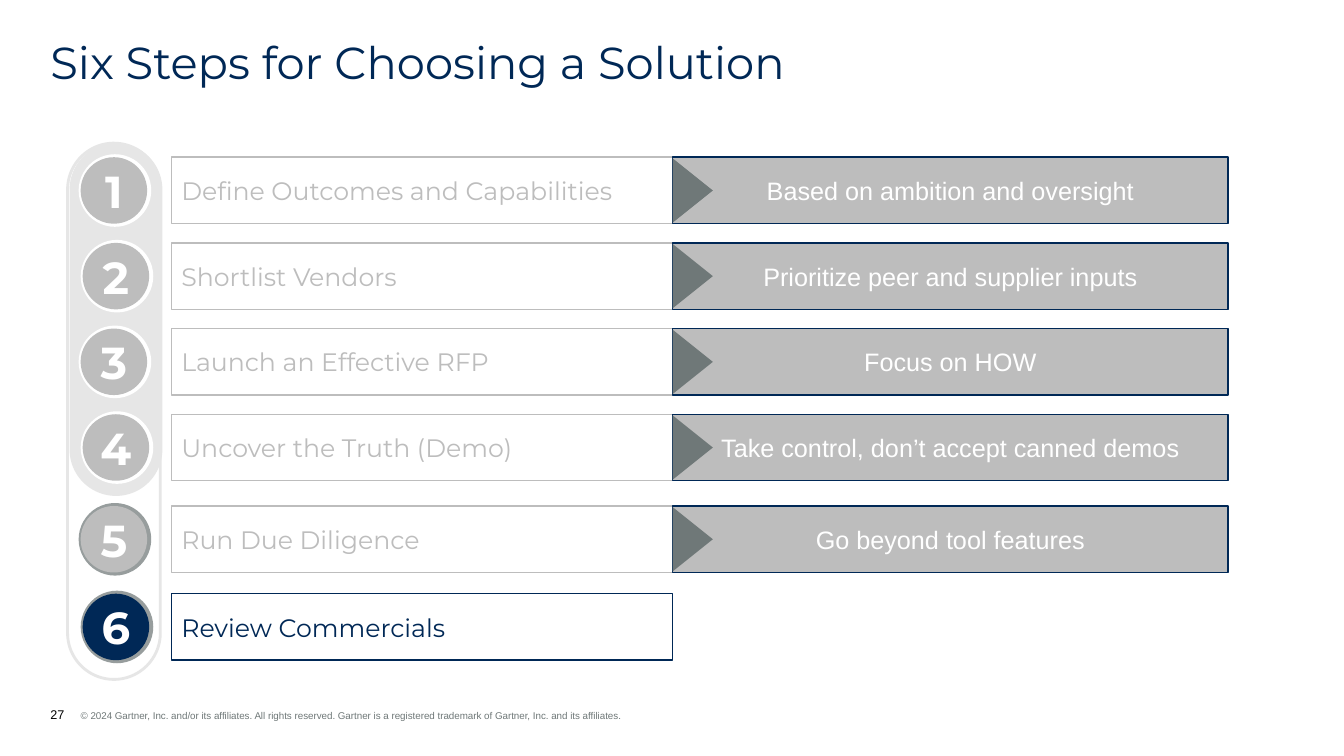
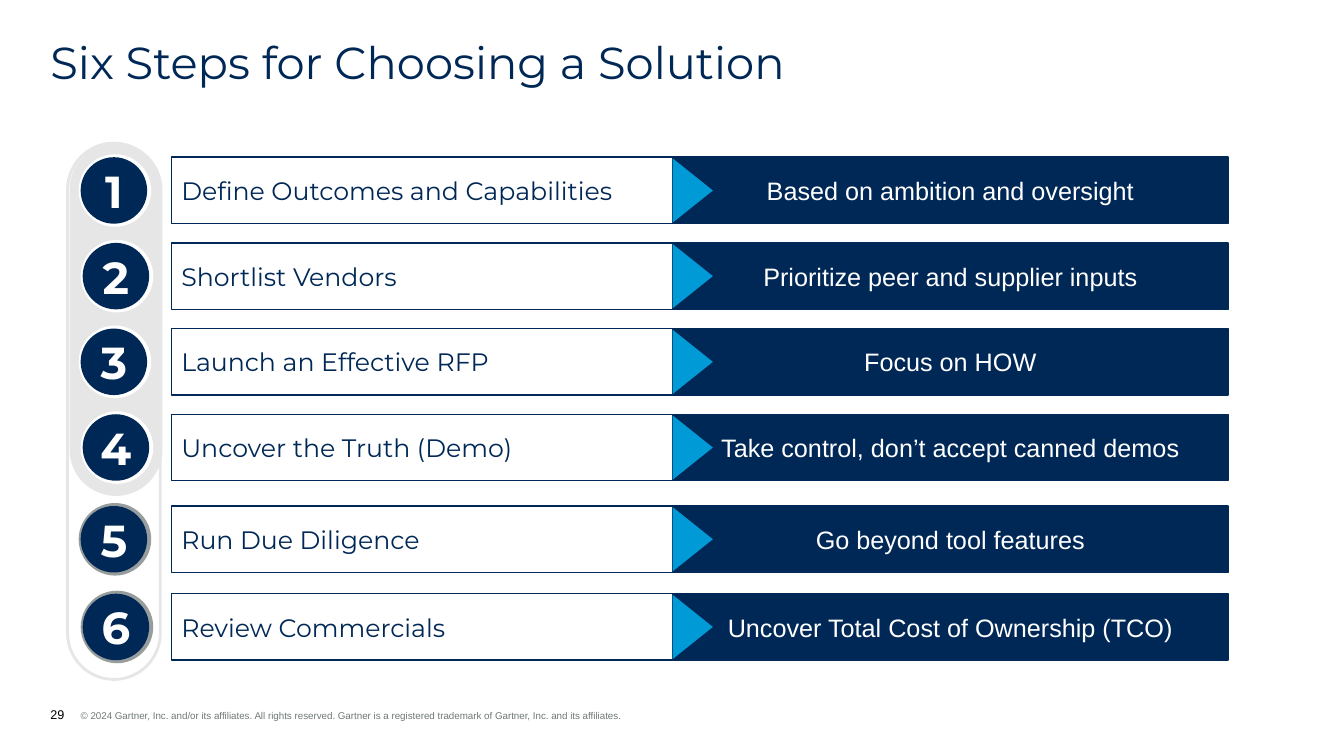
from dataclasses import dataclass
from typing import Optional

import lxml.etree
import pptx
import pptx.dml.color
import pptx.enum.shapes
import pptx.enum.text
import pptx.oxml.ns
import pptx.presentation
import pptx.shapes.autoshape
import pptx.slide
import pptx.text.text
import pptx.util

Shape = pptx.shapes.autoshape.Shape
Slide = pptx.slide.Slide
Kind = pptx.enum.shapes.MSO_SHAPE
Align = pptx.enum.text.PP_ALIGN
Anchor = pptx.enum.text.MSO_ANCHOR


@dataclass(frozen=True)
class Theme:
    navy: str = "002856"
    blue: str = "009AD7"
    silver: str = "BDBDBD"
    slate: str = "6F7878"
    ring: str = "979D9D"
    rail: str = "E6E6E6"
    white: str = "FFFFFF"
    black: str = "000000"
    heading_font: str = "Montserrat"
    body_font: str = "Arial"
    title_size: int = 32
    text_size: int = 18
    page_size: int = 9
    legal_size: int = 7


@dataclass(frozen=True)
class Grid:
    """Inches: columns of the step list and the rule for its rows."""
    width: float = 13.33
    height: float = 7.5
    margin: float = 0.5
    rail_left: float = 0.68
    rail_top: float = 1.42
    rail_width: float = 0.92
    label_left: float = 1.7
    answer_left: float = 6.67
    answer_width: float = 5.51
    row_height: float = 0.66
    ring_border: float = 0.03
    arrow_depth: float = 0.4
    arrow_span: float = 0.64

    def row_top(self, row: int) -> float:
        """Four rows beside the filled rail, then a second group of two."""
        return 1.56 + 0.85 * row if row < 4 else 5.02 + 0.87 * (row - 4)

    def badge_left(self, row: int) -> float:
        """Badges sway slightly, even steps sitting to the right."""
        return 0.8 + 0.02 * (row % 2)


@dataclass(frozen=True)
class Box:
    left: float
    top: float
    width: float
    height: float

    def lengths(self) -> tuple:
        return tuple(pptx.util.Inches(value) for value in
                     (self.left, self.top, self.width, self.height))


@dataclass(frozen=True)
class Step:
    label: str
    answer: str


@dataclass(frozen=True)
class Look:
    main: str
    arrow: str


@dataclass(frozen=True)
class StepsPage:
    number: str
    current: Optional[int] = None  # row whose answer is still to come


THEME = Theme()
GRID = Grid()
ACTIVE = Look(THEME.navy, THEME.blue)
MUTED = Look(THEME.silver, THEME.slate)
TITLE = "Six Steps for Choosing a Solution"
LEGAL = ("© 2024 Gartner, Inc. and/or its affiliates. All rights reserved. "
         "Gartner is a registered trademark of Gartner, Inc. and its affiliates.")
STEPS = (
    Step("Define Outcomes and Capabilities", "Based on ambition and oversight"),
    Step("Shortlist Vendors", "Prioritize peer and supplier inputs"),
    Step("Launch an Effective RFP", "Focus on HOW"),
    Step("Uncover the Truth (Demo)", "Take control, don’t accept canned demos"),
    Step("Run Due Diligence", "Go beyond tool features"),
    Step("Review Commercials", "Uncover Total Cost of Ownership (TCO)"),
)
PAGES = (StepsPage("27", current=5), StepsPage("29"))


def rgb(color: str) -> pptx.dml.color.RGBColor:
    return pptx.dml.color.RGBColor.from_string(color)


def add_run(paragraph, text: str, font: str, size: int, color: str,
            bold: bool = False) -> None:
    run = paragraph.add_run()
    run.text = text
    run.font.name = font
    run.font.size = pptx.util.Pt(size)
    run.font.bold = bold
    run.font.color.rgb = rgb(color)


def set_frame(frame: pptx.text.text.TextFrame, anchor, inset: bool = False) -> None:
    frame.word_wrap = True
    frame.auto_size = pptx.enum.text.MSO_AUTO_SIZE.NONE
    frame.vertical_anchor = anchor
    across, down = (0.1, 0.05) if inset else (0, 0)
    frame.margin_left = frame.margin_right = pptx.util.Inches(across)
    frame.margin_top = frame.margin_bottom = pptx.util.Inches(down)


def add_shape(slide: Slide, kind, box: Box, fill: Optional[str] = None,
              line: Optional[str] = None, weight: float = 1) -> Shape:
    shape = slide.shapes.add_shape(kind, *box.lengths())
    shape.shadow.inherit = False
    if fill:
        shape.fill.solid()
        shape.fill.fore_color.rgb = rgb(fill)
    else:
        shape.fill.background()
    if line:
        shape.line.color.rgb = rgb(line)
        shape.line.width = pptx.util.Pt(weight)
    else:
        shape.line.fill.background()
    return shape


def write_in(shape: Shape, text: str, font: str, size: int, color: str,
             align=Align.CENTER, inset: bool = True, bold: bool = False) -> None:
    set_frame(shape.text_frame, Anchor.MIDDLE, inset)
    paragraph = shape.text_frame.paragraphs[0]
    paragraph.alignment = align
    add_run(paragraph, text, font, size, color, bold)


def add_title(slide: Slide) -> None:
    title = slide.shapes.title
    box = Box(GRID.margin, 0.4, GRID.width - 2 * GRID.margin, 0.48)
    title.left, title.top, title.width, title.height = box.lengths()
    set_frame(title.text_frame, Anchor.TOP)
    paragraph = title.text_frame.paragraphs[0]
    paragraph.alignment = Align.LEFT
    paragraph.line_spacing = 0.9
    add_run(paragraph, TITLE, THEME.heading_font, THEME.title_size, THEME.navy)


def add_footer(slide: Slide, number: str) -> None:
    box = Box(GRID.margin, 7.01, 7.85, 0.15)
    frame = slide.shapes.add_textbox(*box.lengths()).text_frame
    set_frame(frame, Anchor.BOTTOM)
    paragraph = frame.paragraphs[0]
    # Hanging indent with one tab stop after the page number
    properties = paragraph._p.get_or_add_pPr()
    indent = pptx.util.Inches(0.3)
    properties.set("marL", str(indent))
    properties.set("indent", str(-indent))
    tabs = lxml.etree.SubElement(properties, pptx.oxml.ns.qn("a:tabLst"))
    lxml.etree.SubElement(tabs, pptx.oxml.ns.qn("a:tab"),
                          pos=str(pptx.util.Inches(0.32)), algn="l")
    add_run(paragraph, number, THEME.body_font, THEME.page_size, THEME.black)
    add_run(paragraph, "\t" + LEGAL, THEME.body_font, THEME.legal_size, THEME.slate)


def add_rails(slide: Slide) -> None:
    filled = Box(GRID.rail_left + 0.01, GRID.rail_top, GRID.rail_width, 3.5)
    outline = Box(GRID.rail_left - 0.01, GRID.rail_top, GRID.rail_width, 5.32)
    for rail in (add_shape(slide, Kind.ROUNDED_RECTANGLE, filled, fill=THEME.rail),
                 add_shape(slide, Kind.ROUNDED_RECTANGLE, outline,
                           line=THEME.rail, weight=2)):
        rail.adjustments[0] = 0.5


def add_badge(slide: Slide, row: int, look: Look) -> None:
    left, top = GRID.badge_left(row), GRID.row_top(row)
    size, border = GRID.row_height, GRID.ring_border
    ring = Box(left - 0.02, top - border, size + 2 * border, size + 2 * border)
    add_shape(slide, Kind.OVAL, ring, fill=THEME.white if row < 4 else THEME.ring)
    disc = add_shape(slide, Kind.OVAL, Box(left, top, size, size), fill=look.main)
    write_in(disc, str(row + 1), THEME.heading_font, THEME.title_size,
             THEME.white, inset=False, bold=True)


def add_label(slide: Slide, row: int, text: str, look: Look) -> None:
    box = Box(GRID.label_left, GRID.row_top(row),
              GRID.answer_left - GRID.label_left, GRID.row_height)
    label = add_shape(slide, Kind.RECTANGLE, box, line=look.main)
    write_in(label, text, THEME.heading_font, THEME.text_size, look.main, Align.LEFT)


def add_answer(slide: Slide, row: int, text: str, look: Look) -> None:
    top = GRID.row_top(row)
    box = Box(GRID.answer_left, top, GRID.answer_width, GRID.row_height)
    answer = add_shape(slide, Kind.RECTANGLE, box, fill=look.main, line=THEME.navy)
    write_in(answer, text, THEME.body_font, THEME.text_size, THEME.white)
    # Triangle turned to point right, its base on the label's edge
    span, depth = GRID.arrow_span, GRID.arrow_depth
    arrow_box = Box(GRID.answer_left + (depth - span) / 2,
                    top + (GRID.row_height - depth) / 2, span, depth)
    arrow = add_shape(slide, Kind.ISOSCELES_TRIANGLE, arrow_box, fill=look.arrow)
    arrow.rotation = 90


def add_steps_slide(presentation: pptx.presentation.Presentation,
                    page: StepsPage) -> None:
    title_only = presentation.slide_layouts[5]
    slide = presentation.slides.add_slide(title_only)
    add_footer(slide, page.number)
    add_title(slide)
    add_rails(slide)
    for row, step in enumerate(STEPS):
        look = ACTIVE if page.current in (None, row) else MUTED
        add_badge(slide, row, look)
        add_label(slide, row, step.label, look)
        if row != page.current:
            add_answer(slide, row, step.answer, look)


def main() -> None:
    presentation = pptx.Presentation()
    presentation.slide_width = pptx.util.Inches(GRID.width)
    presentation.slide_height = pptx.util.Inches(GRID.height)
    for page in PAGES:
        add_steps_slide(presentation, page)
    presentation.save("out.pptx")


if __name__ == "__main__":
    main()
